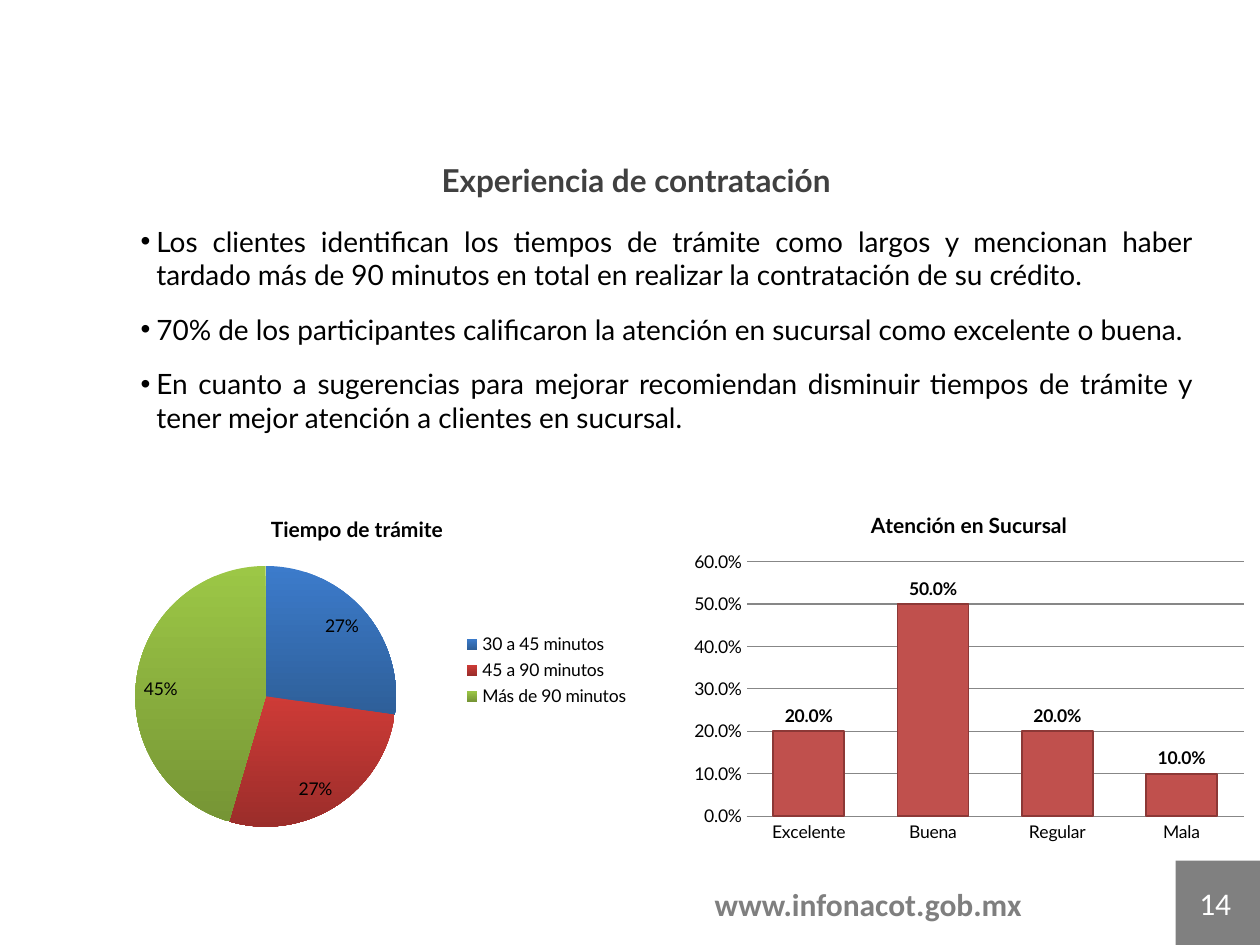
from pptx import Presentation
from pptx.chart.data import CategoryChartData
from pptx.dml.color import RGBColor
from pptx.enum.chart import XL_CHART_TYPE, XL_LABEL_POSITION, XL_LEGEND_POSITION, XL_TICK_MARK
from pptx.enum.shapes import MSO_SHAPE
from pptx.enum.text import MSO_ANCHOR, MSO_AUTO_SIZE, PP_ALIGN
from pptx.oxml import parse_xml
from pptx.oxml.ns import nsdecls
from pptx.util import Pt
from lxml import etree

PIE, COLUMNS = XL_CHART_TYPE.PIE, XL_CHART_TYPE.COLUMN_CLUSTERED
INSIDE_END, OUTSIDE_END = XL_LABEL_POSITION.INSIDE_END, XL_LABEL_POSITION.OUTSIDE_END
LEGEND_RIGHT = XL_LEGEND_POSITION.RIGHT
NO_TICK = XL_TICK_MARK.NONE
RECTANGLE = MSO_SHAPE.RECTANGLE
TOP, MIDDLE = MSO_ANCHOR.TOP, MSO_ANCHOR.MIDDLE
NO_AUTOFIT = MSO_AUTO_SIZE.NONE
CENTER, JUSTIFY = PP_ALIGN.CENTER, PP_ALIGN.JUSTIFY

BLACK = RGBColor(0x00, 0x00, 0x00)
WHITE = RGBColor(0xFF, 0xFF, 0xFF)
TITLE_GRAY = RGBColor(0x40, 0x40, 0x40)
ADDRESS_GRAY = RGBColor(0x7F, 0x7F, 0x7F)
BLOCK_GRAY = RGBColor(0x80, 0x80, 0x80)
GRID_GRAY = RGBColor(0x87, 0x87, 0x87)
COLUMN_RED = RGBColor(0xC0, 0x50, 0x4D)
COLUMN_EDGE = RGBColor(0x8C, 0x38, 0x36)
SLICE_GRADIENTS = [
    (RGBColor(0x3C, 0x7B, 0xCB), RGBColor(0x2E, 0x5F, 0x99)),
    (RGBColor(0xCE, 0x3B, 0x37), RGBColor(0x9B, 0x2D, 0x2A)),
    (RGBColor(0x9C, 0xC7, 0x46), RGBColor(0x76, 0x95, 0x35)),
]


def write(paragraph, text, size, color, font="Lato", bold=False, align=CENTER):
    paragraph.alignment = align
    run = paragraph.add_run()
    run.text = text
    run.font.name = font
    run.font.size = Pt(size)
    run.font.bold = bold
    run.font.color.rgb = color


def place_chart(kind, box, title, categories, values, number_format):
    data = CategoryChartData(number_format=number_format)
    data.categories = categories
    data.add_series(title, values)
    chart = slide.shapes.add_chart(kind, *map(Pt, box), data).chart
    chart.font.name = "Lato"
    chart.font.size = Pt(10)
    chart.font.color.rgb = BLACK
    chart.has_title = True
    write(chart.chart_title.text_frame.paragraphs[0], title, 12, BLACK, bold=True)
    chart.chart_title.include_in_layout = False
    return chart


prs = Presentation()
prs.slide_width, prs.slide_height = Pt(720), Pt(540)
slide = prs.slides.add_slide(prs.slide_layouts[5])

# Title
title = slide.shapes.title
title.left, title.top, title.width, title.height = Pt(131), Pt(88.5), Pt(465), Pt(29)
title.text_frame.auto_size = NO_AUTOFIT
title.text_frame.vertical_anchor = TOP
write(title.text_frame.paragraphs[0], "Experiencia de contratación", 18, TITLE_GRAY, bold=True)

# Findings
findings = [
    "Los clientes identifican los tiempos de trámite como largos y mencionan haber "
    "tardado más de 90 minutos en total en realizar la contratación de su crédito.",
    "70% de los participantes calificaron la atención en sucursal como excelente o buena.",
    "En cuanto a sugerencias para mejorar recomiendan disminuir tiempos de trámite y "
    "tener mejor atención a clientes en sucursal.",
]
body = slide.shapes.add_textbox(Pt(59.8), Pt(124.5), Pt(629), Pt(147.5)).text_frame
body.word_wrap = True
for number, finding in enumerate(findings):
    paragraph = body.add_paragraph() if number else body.paragraphs[0]
    props = paragraph._p.get_or_add_pPr()
    props.set("marL", str(Pt(22.5)))
    props.set("indent", str(Pt(-9)))
    props.append(parse_xml(f'<a:buFont {nsdecls("a")} typeface="Arial"/>'))
    props.append(parse_xml(f'<a:buChar {nsdecls("a")} char="•"/>'))
    if number:
        paragraph.space_before = Pt(6)
    paragraph.space_after = Pt(6)
    write(paragraph, finding, 16, BLACK, align=JUSTIFY)

# Processing time pie
times = place_chart(
    PIE, (41, 283.7, 326, 198.7), "Tiempo de trámite",
    ["30 a 45 minutos", "45 a 90 minutos", "Más de 90 minutos"], [27, 27, 45], "General")
times.has_legend = True
times.legend.position = LEGEND_RIGHT
times.legend.include_in_layout = False
time_plot = times.plots[0]
time_plot.vary_by_categories = True
for position, (light, dark) in enumerate(SLICE_GRADIENTS):
    fill = time_plot.series[0].points[position].format.fill
    fill.gradient()
    fill.gradient_angle = 270
    for stop, color in zip(fill.gradient_stops, (light, dark)):
        stop.color.rgb = color
time_plot.has_data_labels = True
shares = time_plot.data_labels
shares.show_percentage = True
shares.show_value = False
shares.number_format, shares.number_format_is_linked = "0%", False
shares.position = INSIDE_END

# Fixed plot area of the pie
plot_area = times._chartSpace.chart.plotArea
for old_layout in plot_area.findall("{*}layout"):
    plot_area.remove(old_layout)
layout = parse_xml(f'<c:layout {nsdecls("c")}><c:manualLayout/></c:layout>')
for tag, value in [("layoutTarget", "inner"), ("xMode", "edge"), ("yMode", "edge"),
                   ("x", "0.11"), ("y", "0.2"), ("w", "0.46"), ("h", "0.75")]:
    etree.SubElement(layout[0], layout.tag.replace("layout", tag)).set("val", value)
plot_area.insert(0, layout)

# Branch service columns
service = place_chart(
    COLUMNS, (390.2, 281.5, 327, 203.8), "Atención en Sucursal",
    ["Excelente", "Buena", "Regular", "Mala"], [0.2, 0.5, 0.2, 0.1], "0.0%")
service.has_legend = False
service_plot = service.plots[0]
service_plot.vary_by_categories = False
service_plot.gap_width = 75
columns = service_plot.series[0].format
columns.fill.solid()
columns.fill.fore_color.rgb = COLUMN_RED
columns.line.color.rgb = COLUMN_EDGE
columns.line.width = Pt(1)
service_plot.has_data_labels = True
ratings = service_plot.data_labels
ratings.show_value = True
ratings.number_format, ratings.number_format_is_linked = "0.0%", False
ratings.position = OUTSIDE_END
ratings.font.bold = True
ratings.font.size = Pt(10)
ratings.font.name = "Lato"
ratings.font.color.rgb = BLACK
for axis in (service.category_axis, service.value_axis):
    axis.major_tick_mark = axis.minor_tick_mark = NO_TICK
service.category_axis.format.line.color.rgb = GRID_GRAY
scale = service.value_axis
scale.minimum_scale, scale.maximum_scale, scale.major_unit = 0, 0.6, 0.1
scale.tick_labels.number_format = "0.0%"
scale.tick_labels.number_format_is_linked = False
scale.format.line.fill.background()
scale.major_gridlines.format.line.color.rgb = GRID_GRAY
scale.major_gridlines.format.line.width = Pt(0.75)

# Footer: web address and page number
address = slide.shapes.add_textbox(Pt(320.4), Pt(502), Pt(351.4), Pt(29)).text_frame
address.word_wrap = True
write(address.paragraphs[0], "www.infonacot.gob.mx", 18, ADDRESS_GRAY, "Calibri", bold=True)

page_block = slide.shapes.add_shape(RECTANGLE, Pt(671.8), Pt(491.8), Pt(48.2), Pt(48.2))
page_block.shadow.inherit = False
page_block.fill.solid()
page_block.fill.fore_color.rgb = BLOCK_GRAY
page_block.line.fill.background()
page = page_block.text_frame
page.margin_right = Pt(10)
page.vertical_anchor = MIDDLE
write(page.paragraphs[0], "14", 18, WHITE, "Calibri")

prs.save("out.pptx")
